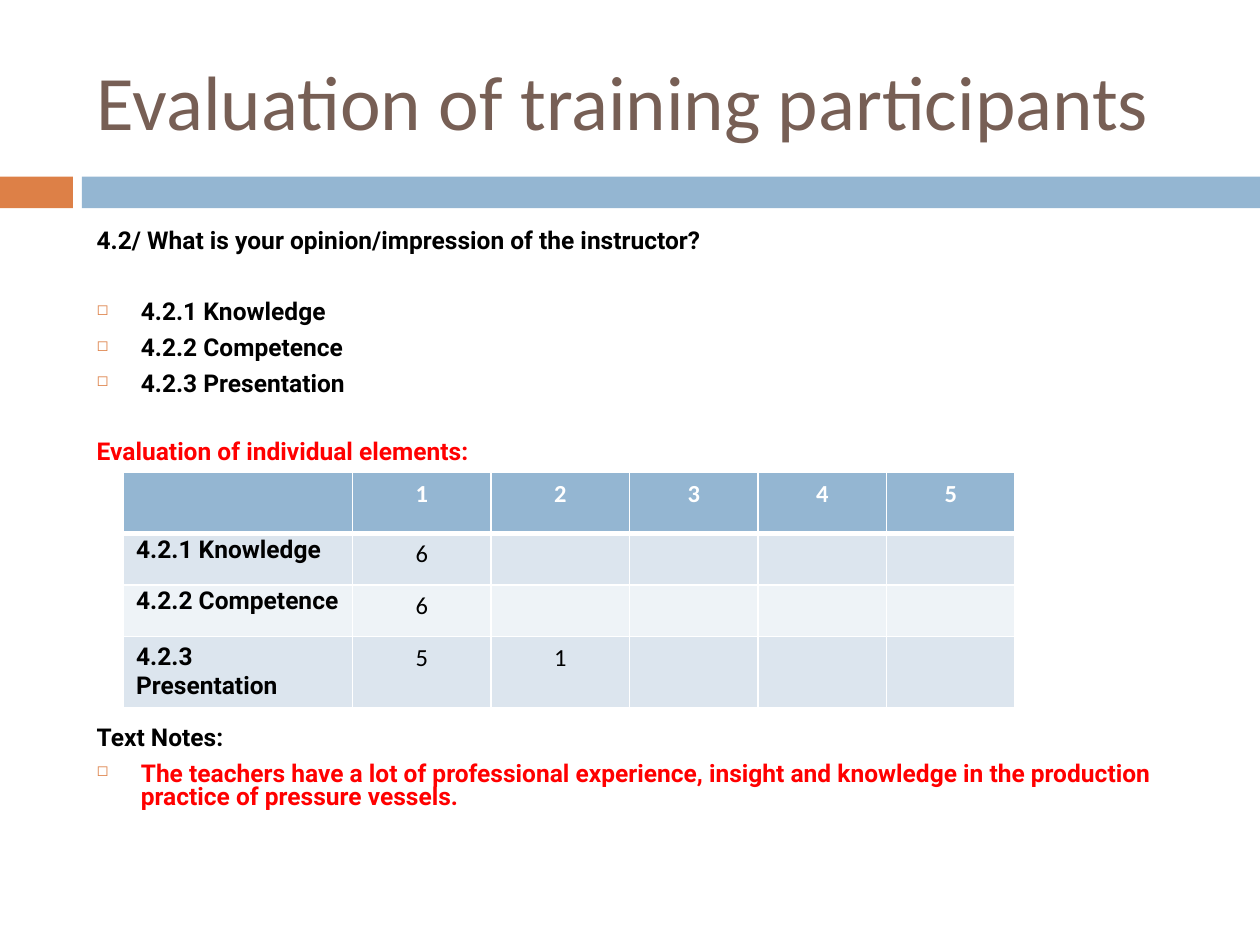
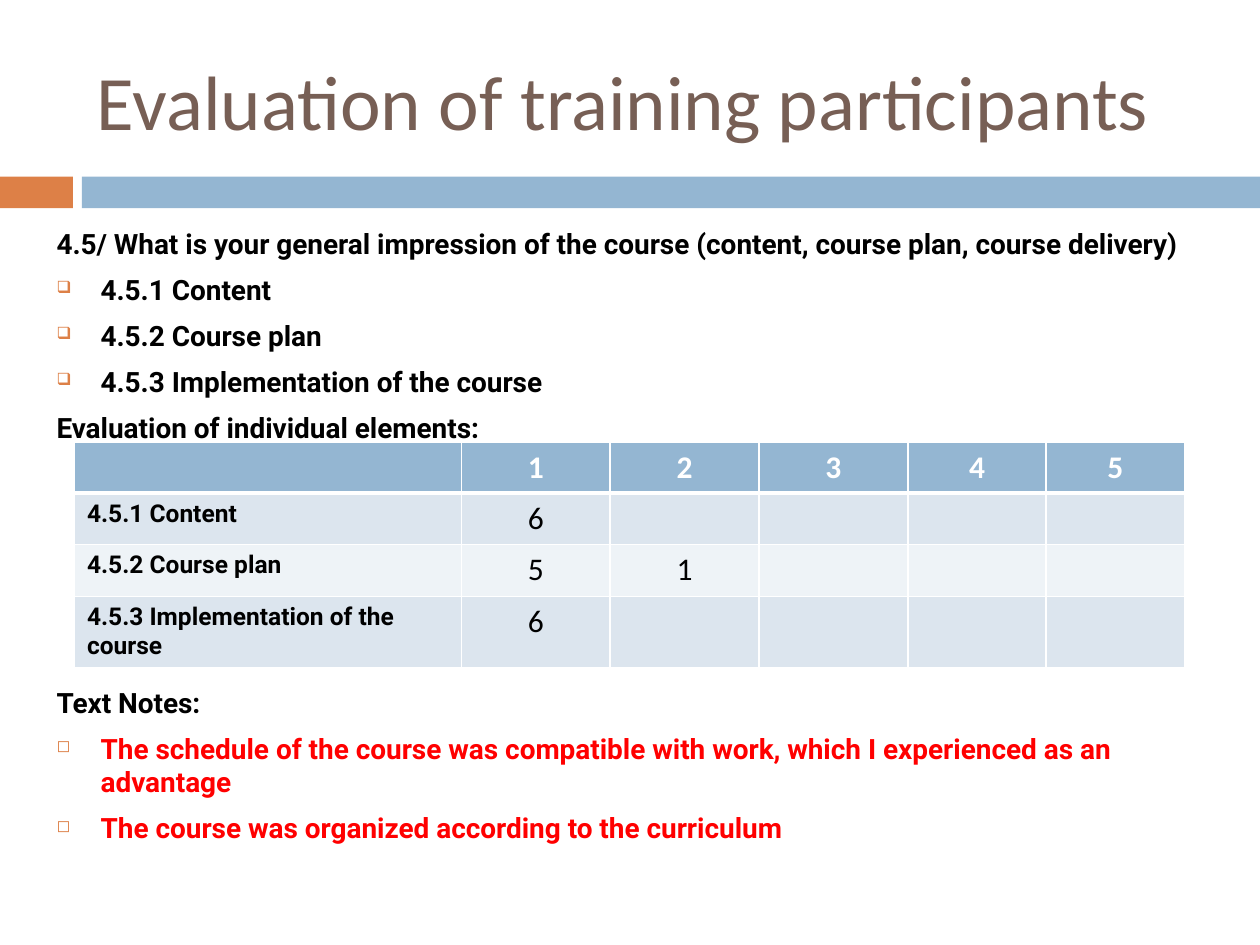
from lxml import etree
from pptx import Presentation
from pptx import util as u
from pptx.dml.color import RGBColor
from pptx.enum import shapes, text
from pptx.oxml import ns

ORANGE, BLUE, BROWN = "DD8047", "94B6D2", "775F55"
BLACK, WHITE, RED = "000000", "FFFFFF", "FF0000"
ROW_FILLS = ["DCE5EE", "EEF3F7"]
HEADER = ["", "1", "2", "3", "4", "5"]
HANG = u.Cm(0.89)


def paint(target, colour):
    """Give a fill, or a font's fill, one solid colour."""
    target.solid()
    target.fore_color.rgb = RGBColor.from_string(colour)


def add_span(para, wording, font, size, colour, bold=False):
    span = para.add_run()
    span.text = wording
    span.font.name, span.font.size, span.font.bold = font, u.Pt(size), bold
    paint(span.font.fill, colour)


# Body lines: wording, bullet, colour, space before in points
# Tables: lengths in centimetres
pages = [
    {
        "body_box": (1.7, 4.52, 23.19, 13.87), "body_size": 14, "line_spacing": 0.8,
        "body": [
            ("4.2/ What is your opinion/impression of the instructor?", "", BLACK, 7),
            ("4.2.1 Knowledge", "◻", BLACK, 27.5),
            ("4.2.2 Competence", "◻", BLACK, 7),
            ("4.2.3 Presentation", "◻", BLACK, 7),
            ("Evaluation of individual elements:", "", RED, 25.5),
            ("Text Notes:", "", BLACK, 150),
            ("The teachers have a lot of professional experience, insight and knowledge "
             "in the production practice of pressure vessels.", "◻", RED, 7),
        ],
        "table_at": (2.49, 9.53), "mark_size": 14,
        "columns": [4.62, 2.79, 2.79, 2.59, 2.59, 2.59],
        "rows": [1.22, 1.04, 1.04, 1.42],
        "label_spacing": [0.8, 0.8, 1.0],
        "ratings": [["4.2.1 Knowledge", "6"],
                    ["4.2.2 Competence", "6"],
                    ["4.2.3 Presentation", "5", "1"]],
    },
    {
        "body_box": (0.89, 4.45, 24, 14.07), "body_size": 16, "line_spacing": 1.0,
        "body": [
            ("4.5/ What is your general impression of the course "
             "(content, course plan, course delivery)", "", BLACK, 7),
            ("4.5.1 Content", "❑", BLACK, 7),
            ("4.5.2 Course plan", "❑", BLACK, 7),
            ("4.5.3 Implementation of the course", "❑", BLACK, 7),
            ("Evaluation of individual elements:", "", BLACK, 7),
            ("Text Notes:", "", BLACK, 138),
            ("The schedule of the course was compatible with work, "
             "which I experienced as an advantage", "◻", RED, 7),
            ("The course was organized according to the curriculum", "◻", RED, 7),
        ],
        "table_at": (1.5, 8.92), "mark_size": 18,
        "columns": [7.8, 3, 3, 3, 2.79, 2.79],
        "rows": [1.02, 1.04, 1.04, 1.4],
        "label_spacing": [1.0, 1.0, 1.0],
        "ratings": [["4.5.1 Content", "6"],
                    ["4.5.2 Course plan", "5", "1"],
                    ["4.5.3 Implementation of the course", "6"]],
    },
]

deck = Presentation()
deck.slide_width, deck.slide_height = u.Cm(25.4), u.Cm(19.05)

for content in pages:
    page = deck.slides.add_slide(deck.slide_layouts[5])

    # Bands under the title
    for left, width, colour in [(0, 1.47, ORANGE), (1.65, 23.75, BLUE)]:
        band = page.shapes.add_shape(shapes.MSO_SHAPE.RECTANGLE, u.Cm(left), u.Cm(3.56),
                                     u.Cm(width), u.Cm(0.64))
        band.shadow.inherit = False
        paint(band.fill, colour)
        band.line.fill.background()

    # Title
    title = page.shapes.title
    title.left, title.top, title.width, title.height = map(u.Cm, (1.7, 0.64, 22.66, 2.74))
    title.text_frame.auto_size = text.MSO_AUTO_SIZE.NONE
    title.text_frame.vertical_anchor = text.MSO_ANCHOR.MIDDLE
    para = title.text_frame.paragraphs[0]
    para.alignment = text.PP_ALIGN.LEFT
    add_span(para, "Evaluation of training participants", "Calibri", 44, BROWN)

    # Questions and notes
    box = page.shapes.add_textbox(*map(u.Cm, content["body_box"]))
    frame = box.text_frame
    frame.word_wrap = True
    for number, (wording, bullet, colour, gap) in enumerate(content["body"]):
        para = frame.add_paragraph() if number else frame.paragraphs[0]
        para.line_spacing = content["line_spacing"]
        para.space_before = u.Pt(gap)
        properties = para._p.get_or_add_pPr()
        properties.set("marL", str(HANG))
        properties.set("indent", str(-HANG))
        if bullet:
            bullet_colour = etree.SubElement(properties, ns.qn("a:buClr"))
            etree.SubElement(bullet_colour, ns.qn("a:srgbClr"), val=ORANGE)
            etree.SubElement(properties, ns.qn("a:buSzPct"), val="60000")
            etree.SubElement(properties, ns.qn("a:buChar"), char=bullet)
        add_span(para, wording, "Roboto", content["body_size"], colour, True)

    # Ratings table
    left, top = content["table_at"]
    columns, rows = content["columns"], content["rows"]
    table = page.shapes.add_table(len(rows), len(columns), u.Cm(left), u.Cm(top),
                                  u.Cm(sum(columns)), u.Cm(sum(rows))).table
    table.first_row = table.horz_banding = False
    for column, width in zip(table.columns, columns):
        column.width = u.Cm(width)
    for row, height in zip(table.rows, rows):
        row.height = u.Cm(height)

    for r, wordings in enumerate([HEADER] + content["ratings"]):
        for c in range(len(columns)):
            cell = table.cell(r, c)
            for side in "LRTB":
                thick = (r, side) in [(0, "B"), (1, "T")]
                border = etree.SubElement(cell._tc.get_or_add_tcPr(), ns.qn("a:ln" + side),
                                          w=str(u.Pt(3 if thick else 1)))
                border_fill = etree.SubElement(border, ns.qn("a:solidFill"))
                etree.SubElement(border_fill, ns.qn("a:srgbClr"), val=WHITE)
            paint(cell.fill, ROW_FILLS[(r - 1) % 2] if r else BLUE)

            if c >= len(wordings) or not wordings[c]:
                continue
            para = cell.text_frame.paragraphs[0]
            if c == 0:
                para.line_spacing = content["label_spacing"][r - 1]
                add_span(para, wordings[c], "Roboto", 14, BLACK, True)
            else:
                para.alignment = text.PP_ALIGN.CENTER
                add_span(para, wordings[c], "Calibri", content["mark_size"],
                         BLACK if r else WHITE, r == 0)

deck.save("out.pptx")
